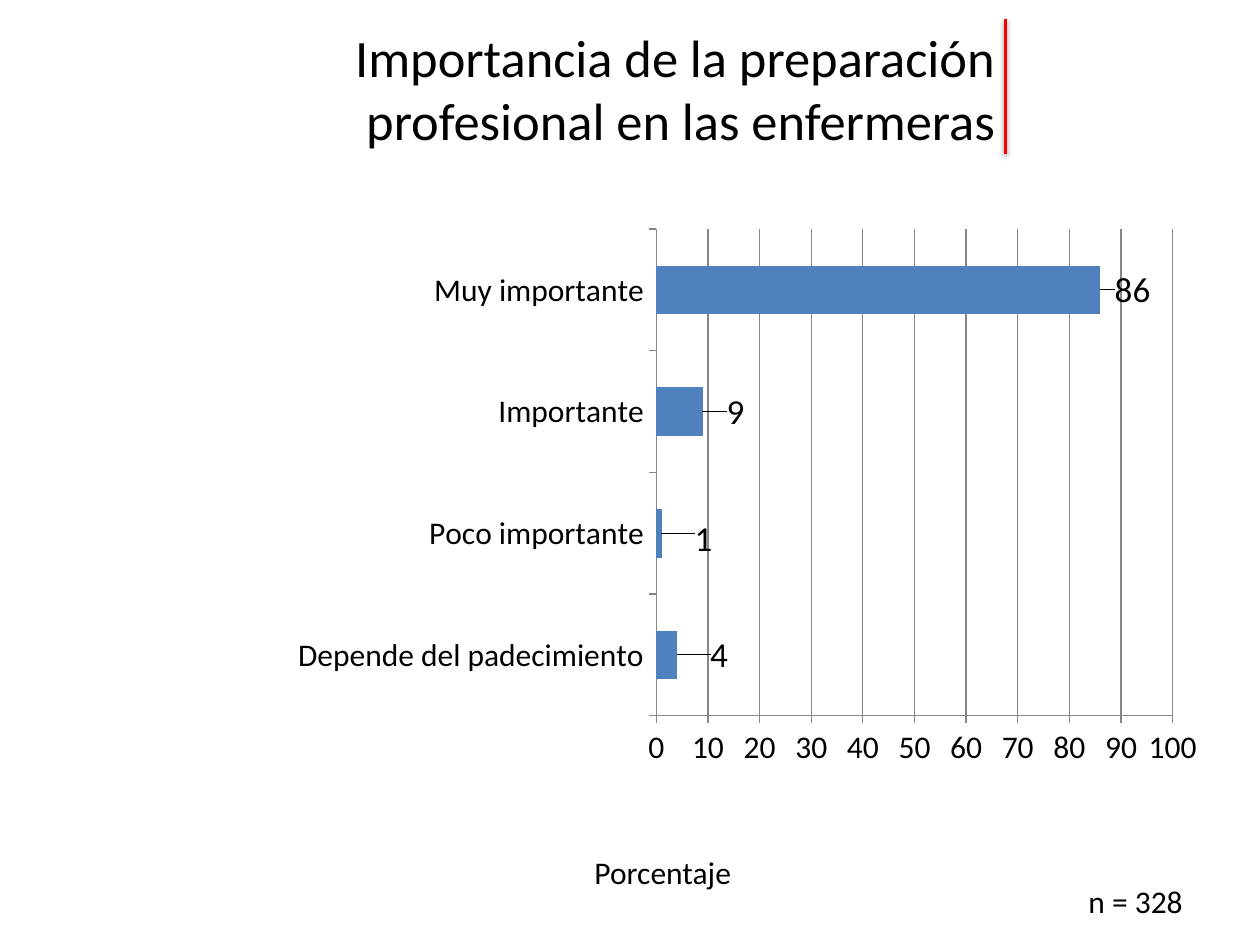
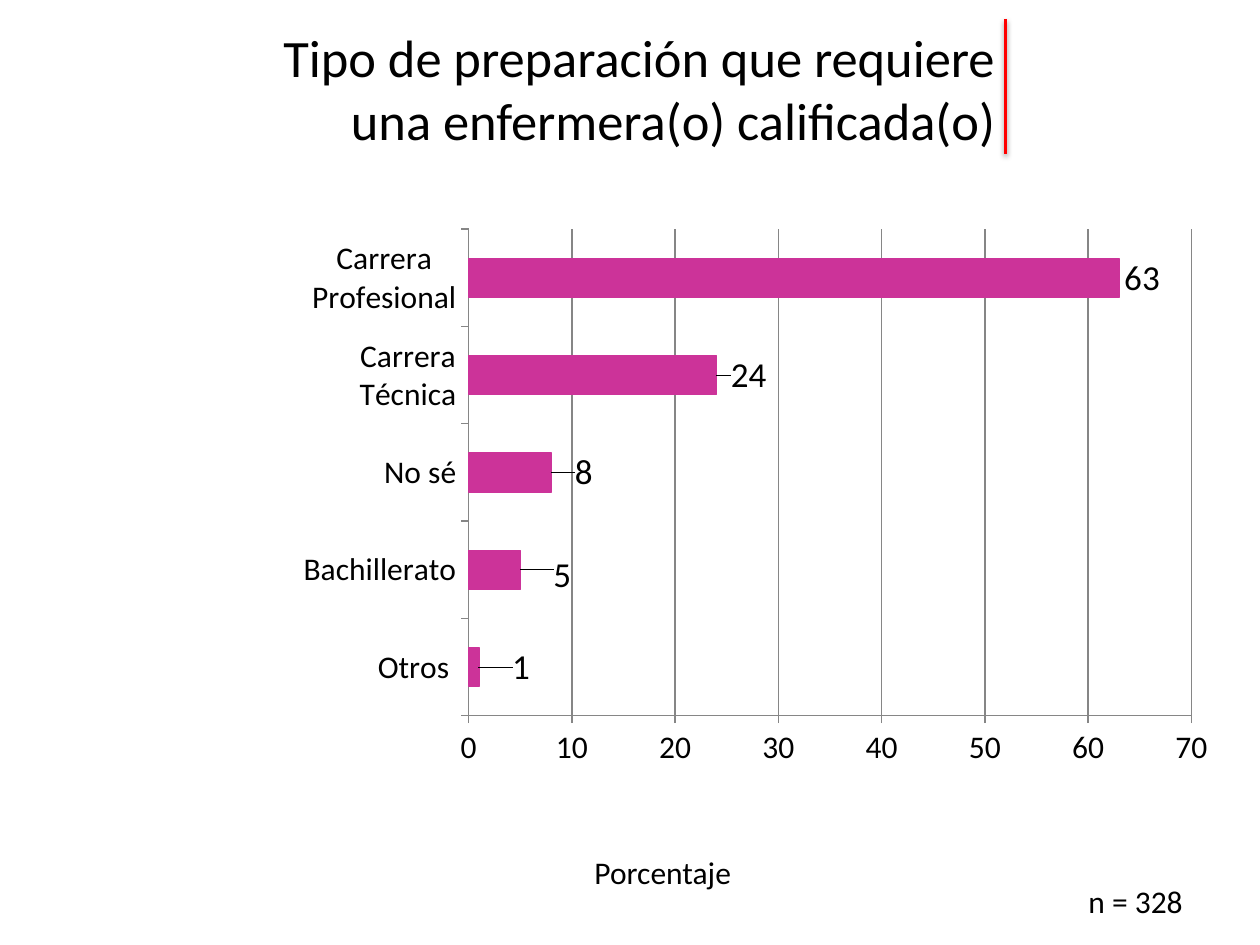
from dataclasses import dataclass

from lxml import etree
from pptx import Presentation
from pptx.chart.data import CategoryChartData
from pptx.dml.color import RGBColor
from pptx.enum.chart import XL_CHART_TYPE, XL_LABEL_POSITION, XL_TICK_MARK
from pptx.enum.shapes import MSO_CONNECTOR
from pptx.enum.text import MSO_ANCHOR, MSO_AUTO_SIZE, PP_ALIGN
from pptx.oxml import parse_xml
from pptx.oxml.ns import nsdecls, qn
from pptx.util import Inches, Pt

BAR = XL_CHART_TYPE.BAR_CLUSTERED
OUTSIDE_END = XL_LABEL_POSITION.OUTSIDE_END
TICK_OUT, TICK_NONE = XL_TICK_MARK.OUTSIDE, XL_TICK_MARK.NONE
RIGHT, MIDDLE = PP_ALIGN.RIGHT, MSO_ANCHOR.MIDDLE
STRAIGHT = MSO_CONNECTOR.STRAIGHT
NO_FIT, FIT_SHAPE = MSO_AUTO_SIZE.NONE, MSO_AUTO_SIZE.SHAPE_TO_FIT_TEXT


@dataclass(frozen=True)
class Theme:
    font: str = "Calibri"
    text: RGBColor = RGBColor(0, 0, 0)
    rule: RGBColor = RGBColor(0xFF, 0, 0)
    grid: RGBColor = RGBColor(0x86, 0x86, 0x86)
    blue: RGBColor = RGBColor(0x4F, 0x81, 0xBD)
    magenta: RGBColor = RGBColor(0xCC, 0x33, 0x99)
    title_size: int = 30
    label_size: int = 20
    body_size: int = 18


@dataclass(frozen=True)
class Bar:
    category: str
    value: int
    dx: float  # label shift, as a share of the chart width
    dy: float = 0  # label shift, as a share of the chart height


@dataclass(frozen=True)
class Survey:
    title: str
    bars: tuple[Bar, ...]
    color: RGBColor
    axis_max: int
    plot_x: float
    plot_w: float
    outlined: bool = False


@dataclass(frozen=True)
class Caption:
    text: str
    left: float
    top: float
    width: float
    height: float = 0.4


THEME = Theme()
CAPTIONS = (
    Caption("n = 328", 8.54, 6.95, 0.96),
    Caption("Porcentaje", 4.62, 6.72, 1.3),
)
SURVEYS = (
    Survey(
        "Importancia de la preparación profesional en las enfermeras",
        (
            Bar("Depende del padecimiento", 4, 0.03),
            Bar("Poco importante", 1, 0.03, 0.01),
            Bar("Importante", 9, 0.02),
            Bar("Muy importante", 86, 0.01),
        ),
        THEME.blue, axis_max=100, plot_x=0.4, plot_w=0.55,
    ),
    Survey(
        "Tipo de preparación que requiere una enfermera(o) calificada(o)",
        (
            Bar("Otros ", 1, 0.03),
            Bar("Bachillerato", 5, 0.03, 0.01),
            Bar("No sé", 8, 0.02),
            Bar("Carrera\nTécnica", 24, 0.01),
            Bar("Carrera\nProfesional", 63, 0),
        ),
        THEME.magenta, axis_max=70, plot_x=0.2, plot_w=0.77, outlined=True,
    ),
)


def style_font(font, size: int) -> None:
    font.name = THEME.font
    font.size = Pt(size)
    font.color.rgb = THEME.text


def add_title(s, text: str) -> None:
    sp = s.shapes.title
    sp.left, sp.top = Inches(1.92), Inches(0.07)
    sp.width, sp.height = Inches(6.08), Inches(1.25)
    tf = sp.text_frame
    tf.text = text
    tf.word_wrap = True
    tf.auto_size = NO_FIT
    tf.vertical_anchor = MIDDLE
    p = tf.paragraphs[0]
    p.alignment = RIGHT
    style_font(p.runs[0].font, THEME.title_size)


def add_title_rule(s) -> None:
    """Draw the red line beside the title, with its soft shadow."""
    x = Inches(7.98)
    rule = s.shapes.add_connector(STRAIGHT, x, Inches(0.15), x, Inches(1.22))
    rule.line.color.rgb = THEME.rule
    rule.line.width = Pt(2)
    rule._element.spPr.append(parse_xml(
        f'<a:effectLst {nsdecls("a")}>'
        f'<a:outerShdw blurRad="{Pt(3.1)}" dist="{Pt(1.6)}" dir="5400000" rotWithShape="0">'
        f'<a:srgbClr val="{THEME.text}"><a:alpha val="38000"/></a:srgbClr>'
        '</a:outerShdw></a:effectLst>'))


def add_caption(s, caption: Caption) -> None:
    sp = s.shapes.add_textbox(Inches(caption.left), Inches(caption.top),
                              Inches(caption.width), Inches(caption.height))
    tf = sp.text_frame
    tf.text = caption.text
    tf.word_wrap = False
    tf.auto_size = FIT_SHAPE
    style_font(tf.paragraphs[0].runs[0].font, THEME.body_size)


def manual_layout(**settings):
    """Build a c:layout element from its settings, given in schema order."""
    layout = etree.Element(qn("c:layout"))
    manual = etree.SubElement(layout, qn("c:manualLayout"))
    for tag, value in settings.items():
        etree.SubElement(manual, qn(f"c:{tag}")).set("val", str(value))
    return layout


def place_plot(chart, survey: Survey) -> None:
    plot_area = chart._chartSpace.find(f".//{qn('c:plotArea')}")
    for old in plot_area.findall(qn("c:layout")):
        plot_area.remove(old)
    plot_area.insert(0, manual_layout(
        layoutTarget="inner", xMode="edge", yMode="edge",
        x=survey.plot_x, y=0.02, w=survey.plot_w, h=0.87))


def label_bars(series, bars: tuple[Bar, ...]) -> None:
    labels = series.data_labels
    labels.show_value = True
    style_font(labels.font, THEME.label_size)
    for i in range(len(bars)):
        label = series.points[i].data_label
        style_font(label.font, THEME.label_size)
        label.position = OUTSIDE_END
    for bar, label in zip(bars, series._element.iter(qn("c:dLbl"))):
        if bar.dx or bar.dy:
            label.find(qn("c:idx")).addnext(manual_layout(x=bar.dx, y=bar.dy))


def style_axes(chart, axis_max: int) -> None:
    values = chart.value_axis
    values.minimum_scale, values.maximum_scale = 0, axis_max
    values.major_unit = 10
    values.has_major_gridlines = True
    for axis in (chart.category_axis, values):
        axis.major_tick_mark, axis.minor_tick_mark = TICK_OUT, TICK_NONE
        style_font(axis.tick_labels.font, THEME.body_size)
    for line in (values.major_gridlines.format.line, values.format.line,
                 chart.category_axis.format.line):
        line.color.rgb = THEME.grid
        line.width = Pt(0.75)


def add_survey_chart(s, survey: Survey) -> None:
    data = CategoryChartData()
    data.categories = [bar.category for bar in survey.bars]
    data.add_series("Series 1", [bar.value for bar in survey.bars])
    chart = s.shapes.add_chart(BAR, Inches(2.23), Inches(1.73),
                               Inches(7.45), Inches(4.44), data).chart
    chart.has_title = False
    chart.has_legend = False
    style_font(chart.font, THEME.body_size)
    plot = chart.plots[0]
    plot.gap_width = 150
    plot.vary_by_categories = False
    series = plot.series[0]
    series.format.fill.solid()
    series.format.fill.fore_color.rgb = survey.color
    if survey.outlined:
        series.format.line.color.rgb = survey.color
        series.format.line.width = Pt(0.75)
    style_axes(chart, survey.axis_max)
    label_bars(series, survey.bars)
    place_plot(chart, survey)


def main() -> None:
    prs = Presentation()
    prs.slide_width, prs.slide_height = Inches(10), Inches(7.5)
    title_only = prs.slide_layouts[5]
    for survey in SURVEYS:
        s = prs.slides.add_slide(title_only)
        add_title_rule(s)
        add_title(s, survey.title)
        add_survey_chart(s, survey)
        for caption in CAPTIONS:
            add_caption(s, caption)
    prs.save("out.pptx")


if __name__ == "__main__":
    main()
